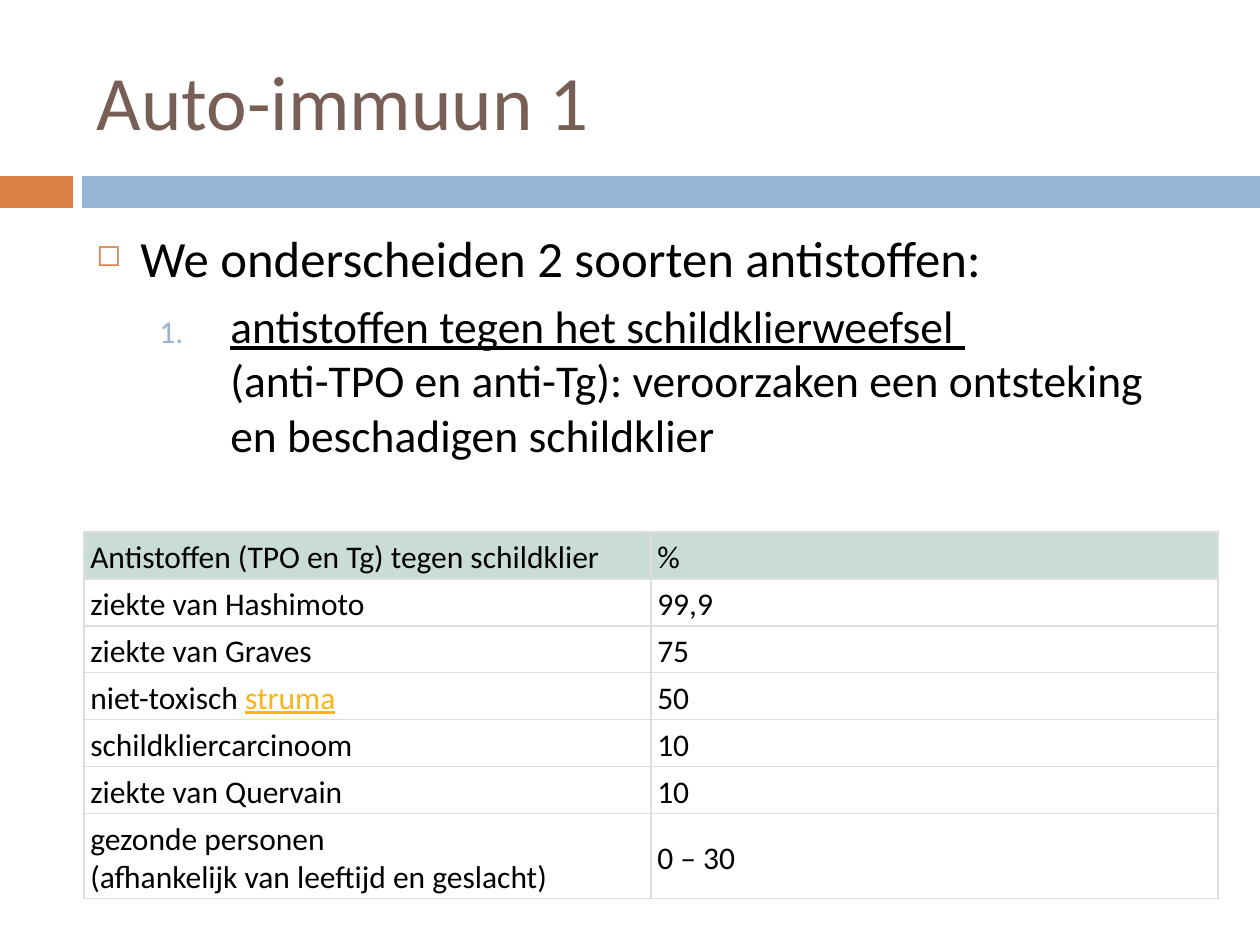
from lxml import etree
from pptx import Presentation
from pptx import util as u
from pptx.dml.color import RGBColor
from pptx.enum import shapes, text
from pptx.oxml import ns

PIXEL = 914400 / 126
FONT = "Calibri"
BLACK = RGBColor(0x00, 0x00, 0x00)
WHITE = RGBColor(0xFF, 0xFF, 0xFF)
BROWN = RGBColor(0x77, 0x5F, 0x55)
ORANGE = RGBColor(0xDD, 0x80, 0x47)
BLUE = RGBColor(0x94, 0xB6, 0xD2)
MINT = RGBColor(0xCA, 0xDC, 0xD8)
GRAY = RGBColor(0xDD, 0xDD, 0xDD)
GOLD = RGBColor(0xF7, 0xB6, 0x15)

ROWS = [
    ("Antistoffen (TPO en Tg) tegen schildklier", "%"),
    ("ziekte van Hashimoto", "99,9"),
    ("ziekte van Graves", "75"),
    ("niet-toxisch ", "50"),
    ("schildkliercarcinoom", "10"),
    ("ziekte van Quervain", "10"),
    ("gezonde personen\n(afhankelijk van leeftijd en geslacht)", "0 – 30"),
]
STRUMA_ROW = 3


def px(length):
    return u.Emu(round(length * PIXEL))


def add_text(paragraph, content, size=18, color=BLACK, underline=False):
    run = paragraph.add_run()
    run.text = content
    run.font.name = FONT
    run.font.size = u.Pt(size)
    run.font.color.rgb = color
    run.font.underline = underline


def add_bullet(paragraph, kind, color, percent, margin, hanging, **attributes):
    properties = paragraph._p.get_or_add_pPr()
    properties.set("marL", str(px(margin)))
    properties.set("indent", str(-px(hanging)))
    holder = etree.SubElement(properties, ns.qn("a:buClr"))
    etree.SubElement(holder, ns.qn("a:srgbClr"), val=str(color))
    etree.SubElement(properties, ns.qn("a:buSzPct"), val=str(percent * 1000))
    etree.SubElement(properties, ns.qn(kind), **attributes)


def add_borders(cell, color, width):
    properties = cell._tc.get_or_add_tcPr()
    for index, side in enumerate(("lnL", "lnR", "lnT", "lnB")):
        line = etree.Element(ns.qn("a:" + side), w=str(u.Pt(width)))
        fill = etree.SubElement(line, ns.qn("a:solidFill"))
        etree.SubElement(fill, ns.qn("a:srgbClr"), val=str(color))
        properties.insert(index, line)


class SlideBuilder:
    def __init__(self, slide):
        self.slide = slide

    def bar(self, left, top, width, height, color):
        shape = self.slide.shapes.add_shape(
            shapes.MSO_SHAPE.RECTANGLE, px(left), px(top), px(width), px(height))
        shape.shadow.inherit = False
        shape.fill.solid()
        shape.fill.fore_color.rgb = color
        shape.line.fill.background()

    def title(self, left, top, width, height, content):
        shape = self.slide.shapes.title
        shape.left, shape.top = px(left), px(top)
        shape.width, shape.height = px(width), px(height)
        frame = shape.text_frame
        frame.auto_size = text.MSO_AUTO_SIZE.NONE
        frame.vertical_anchor = text.MSO_ANCHOR.MIDDLE
        paragraph = frame.paragraphs[0]
        paragraph.alignment = text.PP_ALIGN.LEFT
        add_text(paragraph, content, size=44, color=BROWN)

    def body(self, left, top, width, height):
        box = self.slide.shapes.add_textbox(px(left), px(top), px(width), px(height))
        frame = box.text_frame
        frame.word_wrap = True
        intro = frame.paragraphs[0]
        add_bullet(intro, "a:buChar", ORANGE, 60, 44, 44, char="◻")
        add_text(intro, "We onderscheiden 2 soorten antistoffen:", size=29)
        item = frame.add_paragraph()
        item.level = 1
        add_bullet(item, "a:buAutoNum", BLUE, 70, 134, 71, type="arabicPeriod")
        item.space_before = u.Pt(5.5)
        add_text(item, "antistoffen tegen het schildklierweefsel ", size=26, underline=True)
        item.add_line_break()
        add_text(item, "(anti-TPO en anti-Tg): veroorzaken een ontsteking "
                       "en beschadigen schildklier", size=26)

    def table(self, left, top, column_width, row_height, rows):
        columns = len(rows[0])
        table = self.slide.shapes.add_table(
            len(rows), columns, px(left), px(top),
            px(column_width * columns), px(row_height * len(rows))).table
        table.horz_banding = False
        for row_index, row in enumerate(rows):
            lines = max(content.count("\n") for content in row)
            table.rows[row_index].height = px(row_height + 38 * lines)
            for column_index, content in enumerate(row):
                color = MINT if row_index == 0 else WHITE
                self.cell(table.cell(row_index, column_index), content, color)
        add_text(table.cell(STRUMA_ROW, 0).text_frame.paragraphs[0],
                 "struma", color=GOLD, underline=True)

    def cell(self, cell, content, color):
        cell.margin_left = cell.margin_top = u.Inches(0.05)
        cell.margin_right, cell.margin_bottom = u.Inches(0.1), u.Inches(0.02)
        cell.vertical_anchor = text.MSO_ANCHOR.MIDDLE
        cell.fill.solid()
        cell.fill.fore_color.rgb = color
        add_borders(cell, GRAY, 0.75)
        frame = cell.text_frame
        for index, line in enumerate(content.split("\n")):
            paragraph = frame.add_paragraph() if index else frame.paragraphs[0]
            add_text(paragraph, line)
            paragraph.font.bold = False
            for run in paragraph.runs:
                run.font.bold = False


def main():
    presentation = Presentation()
    presentation.slide_width, presentation.slide_height = px(1260), px(945)
    builder = SlideBuilder(presentation.slides.add_slide(presentation.slide_layouts[5]))
    builder.bar(0, 176, 73, 32, ORANGE)
    builder.bar(82, 176, 1178, 32, BLUE)
    builder.title(84, 32, 1124, 136, "Auto-immuun 1")
    builder.body(84, 221, 1124, 620)
    builder.table(84, 532, 567, 47, ROWS)
    presentation.save("out.pptx")


if __name__ == "__main__":
    main()
